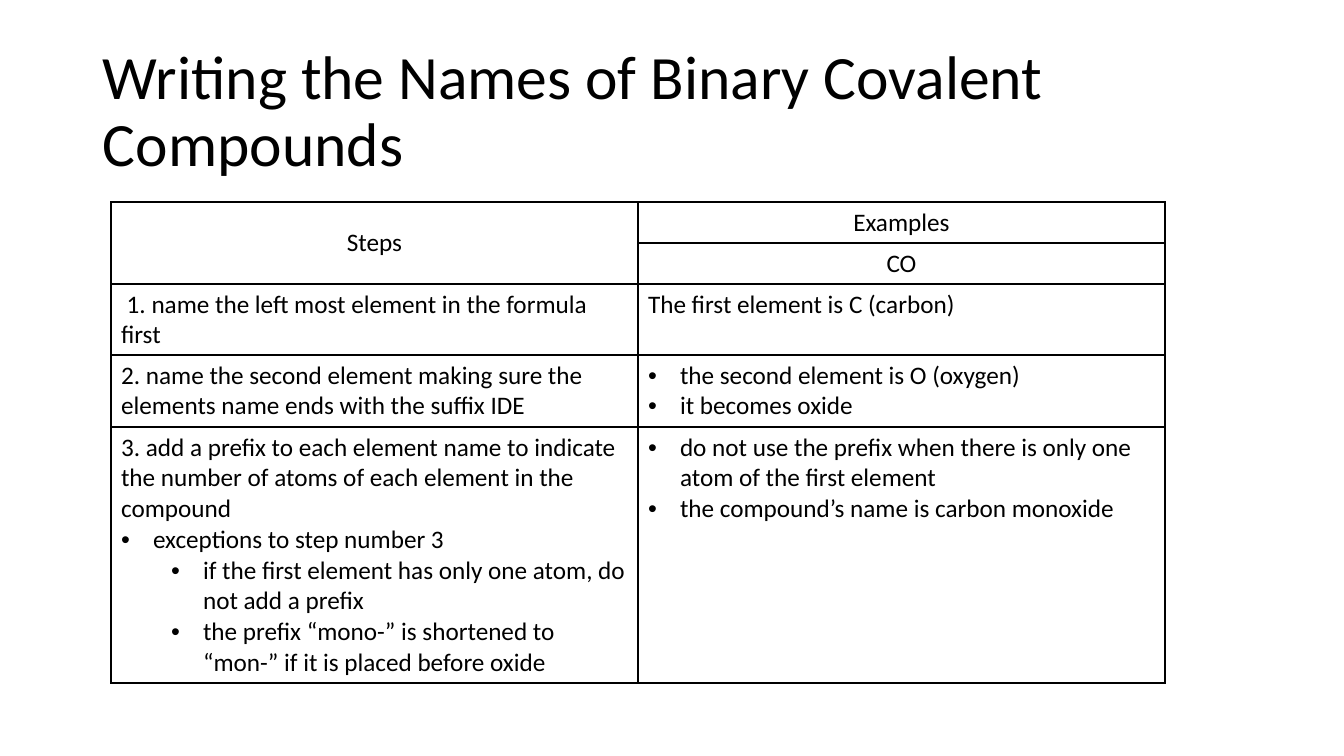
from dataclasses import dataclass

from lxml.etree import SubElement
from pptx import Presentation
from pptx.dml.color import RGBColor
from pptx.enum.text import MSO_ANCHOR, PP_ALIGN
from pptx.oxml.ns import qn
from pptx.util import Pt

EMU_PER_PX = 914400 / 100.8


def px(length):
    return round(length * EMU_PER_PX)


@dataclass(frozen=True)
class Theme:
    font: str = "Calibri"
    ink: str = "000000"
    title_size: int = 44
    body_size: int = 18
    border_width: int = 1
    bullet: str = "•"
    bullet_indent: int = 32
    level_indent: int = 50


class SlideBuilder:
    def __init__(self, presentation, theme):
        self.theme = theme
        self.slide = presentation.slides.add_slide(presentation.slide_layouts[6])

    def format_runs(self, paragraph, size):
        for run in paragraph.runs:
            run.font.name = self.theme.font
            run.font.size = Pt(size)
            run.font.color.rgb = RGBColor.from_string(self.theme.ink)

    def title(self, text, left, top, width, height):
        shape = self.slide.shapes.add_textbox(px(left), px(top), px(width), px(height))
        text_frame = shape.text_frame
        text_frame.word_wrap = True
        text_frame.vertical_anchor = MSO_ANCHOR.MIDDLE
        text_frame.text = text
        paragraph = text_frame.paragraphs[0]
        paragraph.line_spacing = 0.9
        self.format_runs(paragraph, self.theme.title_size)

    def bullet(self, paragraph, level):
        paragraph.level = level
        indent = self.theme.bullet_indent
        properties = paragraph._p.get_or_add_pPr()
        properties.set("marL", str(px(indent + level * self.theme.level_indent)))
        properties.set("indent", str(-px(indent)))
        SubElement(properties, qn("a:buFont"), typeface="Arial")
        SubElement(properties, qn("a:buChar"), char=self.theme.bullet)

    def borders(self, cell):
        properties = cell._tc.get_or_add_tcPr()
        for side in ("lnL", "lnR", "lnT", "lnB"):
            line = SubElement(properties, qn(f"a:{side}"), w=str(Pt(self.theme.border_width)))
            fill = SubElement(line, qn("a:solidFill"))
            SubElement(fill, qn("a:srgbClr"), val=self.theme.ink)

    def fill_cell(self, cell, items, is_header):
        """Write (text, bullet level) items; a level of None means no bullet."""
        cell.text_frame.text = "\n".join(text for text, _ in items)
        for paragraph, (_, level) in zip(cell.text_frame.paragraphs, items):
            if level is not None:
                self.bullet(paragraph, level)
            if is_header:
                paragraph.alignment = PP_ALIGN.CENTER
            self.format_runs(paragraph, self.theme.body_size)
        if is_header:
            cell.vertical_anchor = MSO_ANCHOR.MIDDLE

    def table(self, rows, header_rows, left, top, column_width, row_heights):
        columns = len(rows[0])
        table = self.slide.shapes.add_table(
            len(rows), columns, px(left), px(top),
            px(column_width * columns), px(sum(row_heights))).table
        table.first_row = table.horz_banding = False
        for column in table.columns:
            column.width = px(column_width)
        for row, height in zip(table.rows, row_heights):
            row.height = px(height)
        for row_index, row in enumerate(rows):
            for column_index, items in enumerate(row):
                cell = table.cell(row_index, column_index)
                self.borders(cell)
                cell.fill.background()
                if items:
                    self.fill_cell(cell, items, row_index < header_rows)
        return table


STEPS = [
    # Header rows
    [[("Steps", None)], [("Examples", None)]],
    [[], [("CO", None)]],
    # Naming steps with their examples
    [[(" 1. name the left most element in the formula first", None)],
     [("The first element is C (carbon)", None)]],
    [[("2. name the second element making sure the elements name ends "
       "with the suffix IDE", None)],
     [("the second element is O (oxygen)", 0),
      ("it becomes oxide", 0)]],
    [[("3. add a prefix to each element name to indicate the number of atoms "
       "of each element in the compound", None),
      ("exceptions to step number 3", 0),
      ("if the first element has only one atom, do not add a prefix", 1),
      ("the prefix “mono-” is shortened to “mon-” if it is placed before oxide", 1)],
     [("do not use the prefix when there is only one atom of the first element", 0),
      ("the compound’s name is carbon monoxide", 0)]],
]


def main():
    presentation = Presentation()
    presentation.slide_width, presentation.slide_height = px(1344), px(756)
    builder = SlideBuilder(presentation, Theme())

    # Title
    builder.title("Writing the Names of Binary Covalent Compounds", 93, 40, 1159, 146)

    # Steps table, with "Steps" spanning both header rows
    table = builder.table(STEPS, header_rows=2, left=111, top=202,
                          column_width=527, row_heights=[41, 41, 71, 72, 256])
    table.cell(0, 0).merge(table.cell(1, 0))

    presentation.save("out.pptx")


if __name__ == "__main__":
    main()
